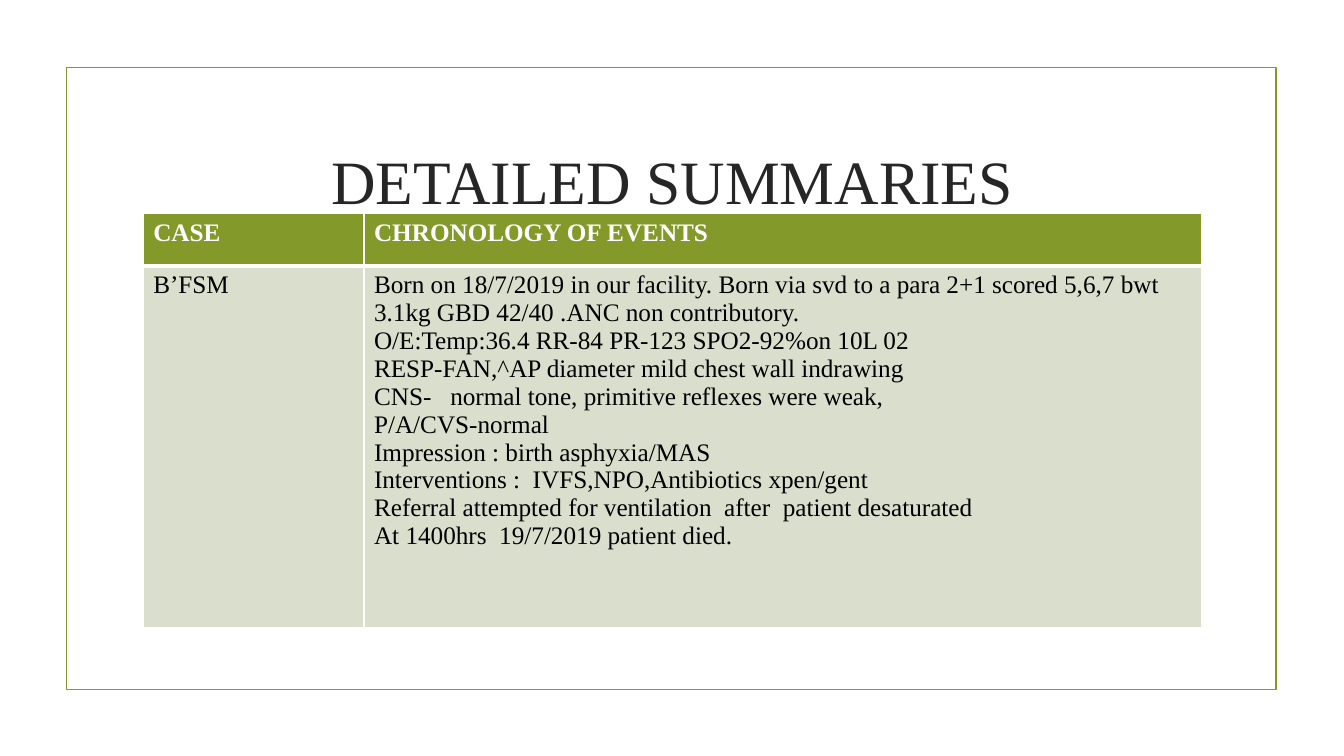
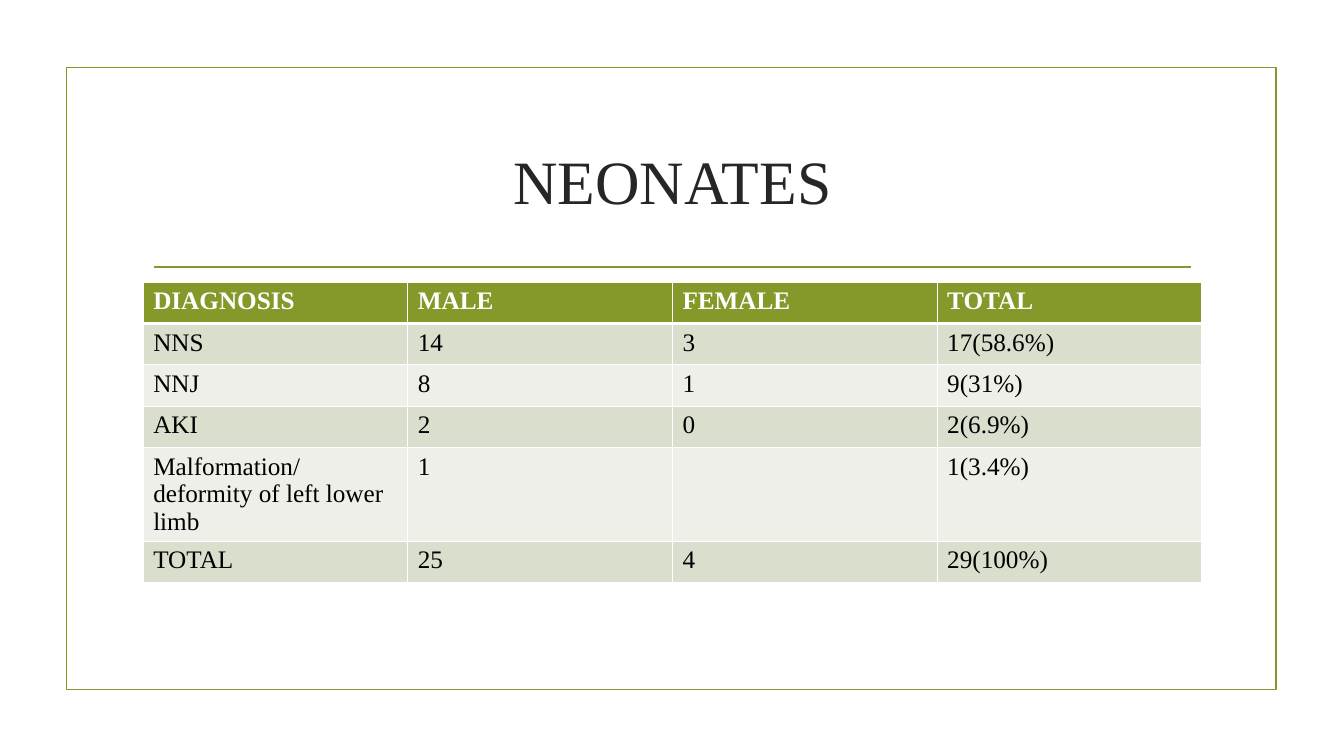
from lxml.etree import SubElement
from pptx import Presentation
from pptx.dml.color import RGBColor
from pptx.enum.shapes import MSO_CONNECTOR, MSO_SHAPE
from pptx.enum.text import MSO_ANCHOR, PP_ALIGN
from pptx.oxml.ns import qn
from pptx.util import Inches, Pt

# Shared look
FONT = "Times New Roman"
GREEN, WHITE, BLACK, DARK = "83992A", "FFFFFF", "000000", "262626"
BANDS = ("D9DECD", "EDEFE8")
LEFT, WIDE = 1.42, 10.5

# Slide content
EVENTS = [
    "Born on 18/7/2019 in our facility. Born via svd to a para 2+1 "
    "scored 5,6,7 bwt 3.1kg GBD 42/40 .ANC non contributory.",
    "O/E:Temp:36.4 RR-84 PR-123 SPO2-92%on 10L 02",
    "RESP-FAN,^AP diameter mild chest wall indrawing",
    "CNS-   normal tone, primitive reflexes were weak,",
    "P/A/CVS-normal",
    "Impression : birth asphyxia/MAS",
    "Interventions :  IVFS,NPO,Antibiotics xpen/gent",
    "Referral attempted for ventilation  after  patient desaturated",
    "At 1400hrs  19/7/2019 patient died.",
]
CASES = [
    ["CASE", "CHRONOLOGY OF EVENTS"],
    ["B’FSM", EVENTS],
]
COUNTS = [
    ["DIAGNOSIS", "MALE", "FEMALE", "TOTAL"],
    ["NNS", "14", "3", "17(58.6%)"],
    ["NNJ", "8", "1", "9(31%)"],
    ["AKI", "2", "0", "2(6.9%)"],
    ["Malformation/ deformity of left lower limb", "1", "", "1(3.4%)"],
    ["TOTAL", "25", "4", "29(100%)"],
]


def color(code):
    return RGBColor.from_string(code)


def add_run(para, text, size, tint, bold=False):
    run = para.add_run()
    run.text = text
    font = run.font
    font.name, font.size, font.bold = FONT, Pt(size), bold
    font.color.rgb = color(tint)


# Frame, rule and title
def add_base(deck, title):
    slide = deck.slides.add_slide(deck.slide_layouts[5])
    frame = slide.shapes.add_shape(
        MSO_SHAPE.RECTANGLE, Inches(0.66), Inches(0.67), Inches(12), Inches(6.17))
    frame.shadow.inherit = False
    frame.fill.background()
    rule = slide.shapes.add_connector(
        MSO_CONNECTOR.STRAIGHT, Inches(1.53), Inches(2.65), Inches(11.81), Inches(2.65))
    SubElement(rule._element.spPr, qn("a:effectLst"))
    for shape in (frame, rule):
        shape.line.color.rgb = color(GREEN)
        shape.line.width = Pt(1.25)

    head = slide.shapes.title
    head.left, head.top = Inches(LEFT), Inches(1.07)
    head.width, head.height = Inches(WIDE), Inches(1.43)
    box = head.text_frame
    box.word_wrap = True
    box.vertical_anchor = MSO_ANCHOR.MIDDLE
    para = box.paragraphs[0]
    para.alignment = PP_ALIGN.CENTER
    add_run(para, title, 44, DARK)
    return slide


# Table cells
def add_edges(cell, top, base):
    props = cell._tc.get_or_add_tcPr()
    for side, width in zip("LRTB", (1, 1, top, base)):
        edge = SubElement(props, qn(f"a:ln{side}"), w=str(Pt(width)))
        fill = SubElement(edge, qn("a:solidFill"))
        SubElement(fill, qn("a:srgbClr"), val=WHITE)


def fill_cell(cell, text, row):
    head = row == 0
    add_edges(cell, 3 if row == 1 else 1, 3 if head else 1)
    cell.fill.solid()
    cell.fill.fore_color.rgb = color(GREEN if head else BANDS[(row - 1) % 2])
    lines = [text] if isinstance(text, str) else text
    box = cell.text_frame
    for num, line in enumerate(lines):
        para = box.paragraphs[0] if num == 0 else box.add_paragraph()
        if line:
            add_run(para, line, 18, WHITE if head else BLACK, head)


def add_grid(slide, top, data, widths, heights):
    table = slide.shapes.add_table(
        len(data), len(widths), Inches(LEFT), Inches(top),
        Inches(sum(widths)), Inches(sum(heights))).table
    for col, width in zip(table.columns, widths):
        col.width = Inches(width)
    for row, height in zip(table.rows, heights):
        row.height = Inches(height)
    for row, texts in enumerate(data):
        for col, text in enumerate(texts):
            fill_cell(table.cell(row, col), text, row)


def main():
    deck = Presentation()
    deck.slide_width, deck.slide_height = Inches(13.33), Inches(7.5)

    # Case summary
    slide = add_base(deck, "DETAILED SUMMARIES")
    add_grid(slide, 2.12, CASES, [2.19, WIDE - 2.19], [0.52, 3.59])

    # Diagnosis counts
    slide = add_base(deck, "NEONATES")
    add_grid(slide, 2.8, COUNTS, [WIDE / 4] * 4, [0.41] * 4 + [0.93, 0.41])

    deck.save("out.pptx")


if __name__ == "__main__":
    main()
